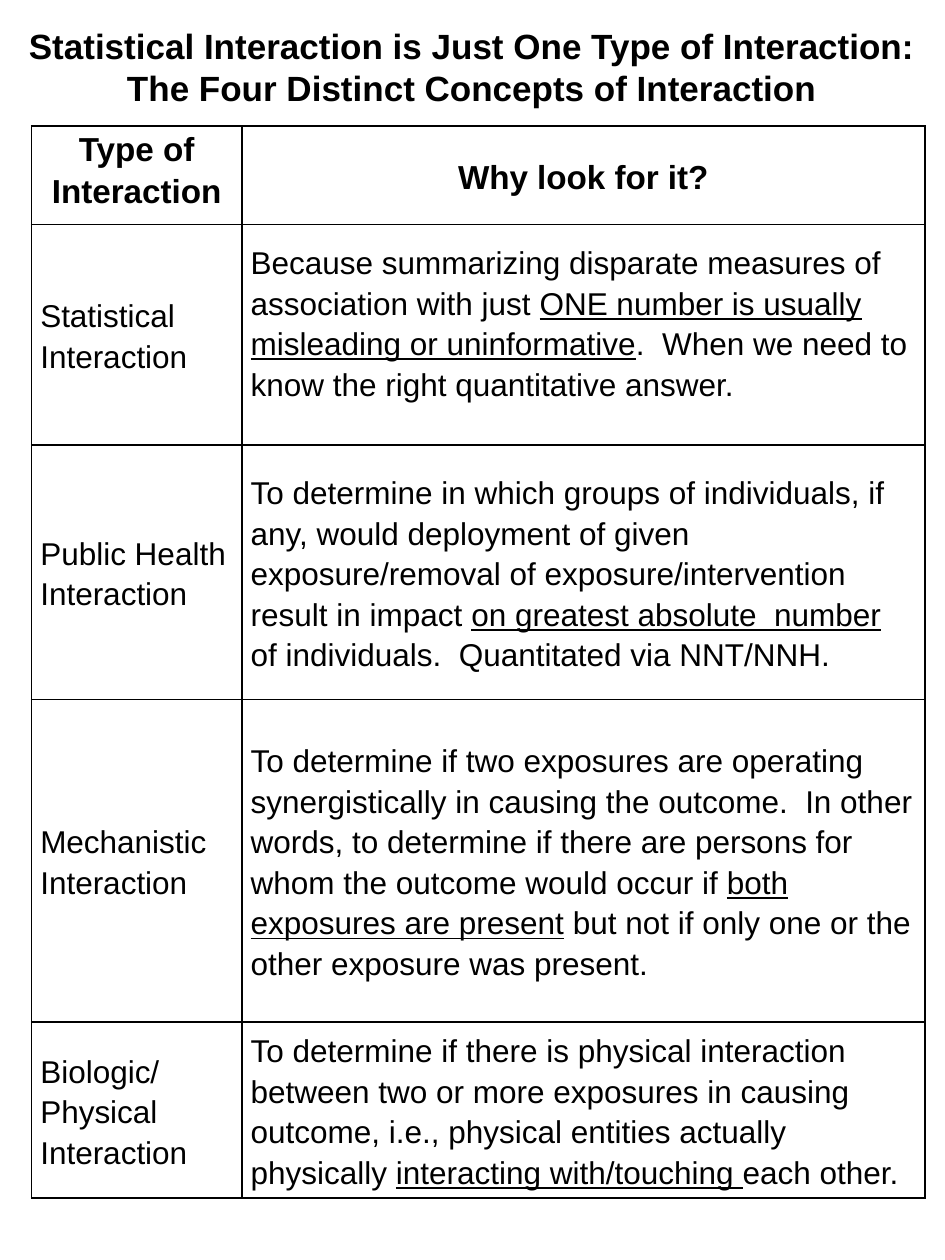
from lxml.etree import SubElement
from pptx import Presentation
from pptx.dml.color import RGBColor
from pptx.enum.text import MSO_ANCHOR, MSO_AUTO_SIZE, PP_ALIGN
from pptx.oxml.ns import qn
from pptx.util import Inches, Pt

INK = "000000"
HEADERS = ["Type of Interaction", "Why look for it?"]
CONCEPTS = [
    ("Statistical Interaction",
     ["Because summarizing disparate measures of association with just ",
      "ONE number is usually misleading or uninformative",
      ".  When we need to know the right quantitative answer."]),
    ("Public Health Interaction",
     ["To determine in which groups of individuals, if any, would deployment of given "
      "exposure/removal of exposure/intervention result in impact ",
      "on greatest absolute  number ",
      "of individuals.  Quantitated via NNT/NNH."]),
    ("Mechanistic Interaction",
     ["To determine if two exposures are operating synergistically in causing the outcome.  "
      "In other words, to determine if there are persons for whom the outcome would occur if ",
      "both exposures are present",
      " but not if only one or the other exposure was present."]),
    ("Biologic/ Physical Interaction",
     ["To determine if there is physical interaction between two or more exposures in "
      "causing outcome, i.e., physical entities actually physically ",
      "interacting with/touching ",
      "each other."]),
]


def color(hex_code):
    return RGBColor.from_string(hex_code)


def add_text(p, text, size=18, bold=False, underline=False, align=PP_ALIGN.LEFT, spacing=1.15):
    p.alignment = align
    p.line_spacing = spacing
    r = p.add_run()
    r.text = text
    r.font.name = "Arial"
    r.font.size = Pt(size)
    r.font.bold = bold
    r.font.underline = underline
    r.font.color.rgb = color(INK)


def format_cell(cell):
    cell.vertical_anchor = MSO_ANCHOR.MIDDLE
    cell.margin_left = cell.margin_right = Inches(0.07)
    cell.margin_top = cell.margin_bottom = 0
    tc_pr = cell._tc.get_or_add_tcPr()
    for side in ("lnL", "lnR", "lnT", "lnB"):
        ln = SubElement(tc_pr, qn(f"a:{side}"), w=str(Pt(1)))
        fill = SubElement(ln, qn("a:solidFill"))
        SubElement(fill, qn("a:srgbClr"), val=INK)
    cell.fill.background()


def add_title(s, left, top, width, height):
    sp = s.shapes.title
    sp.left, sp.top, sp.width, sp.height = map(Inches, (left, top, width, height))
    tf = sp.text_frame
    tf.auto_size = MSO_AUTO_SIZE.NONE
    tf.vertical_anchor = MSO_ANCHOR.BOTTOM
    p = tf.paragraphs[0]
    lines = ["Statistical Interaction is Just One Type of Interaction:",
             "The Four Distinct Concepts of Interaction"]
    for i, line in enumerate(lines):
        if i:
            p.add_line_break()
        add_text(p, line, size=20, bold=True, align=PP_ALIGN.CENTER, spacing=1.0)


def add_concept_table(s, left, top, width, height):
    row_heights = [0.78, 1.75, 2.02, 2.56, 1.4]
    first_width = 1.67
    frame = s.shapes.add_table(len(row_heights), 2, *map(Inches, (left, top, width, height)))
    table = frame.table
    table.first_row = table.horz_banding = False
    table.columns[0].width = Inches(first_width)
    table.columns[1].width = Inches(width - first_width)
    for row, row_height in zip(table.rows, row_heights):
        row.height = Inches(row_height)
        for cell in row.cells:
            format_cell(cell)
    for col, header in enumerate(HEADERS):
        p = table.cell(0, col).text_frame.paragraphs[0]
        add_text(p, header, size=19, bold=True, align=PP_ALIGN.CENTER)
    table.cell(0, 0).vertical_anchor = MSO_ANCHOR.TOP
    for row, (name, reason) in enumerate(CONCEPTS, start=1):
        add_text(table.cell(row, 0).text_frame.paragraphs[0], name)
        p = table.cell(row, 1).text_frame.paragraphs[0]
        for i, part in enumerate(reason):
            add_text(p, part, underline=i == 1)
    table.cell(1, 1).margin_bottom = Inches(0.2)


def main():
    prs = Presentation()
    prs.slide_width, prs.slide_height = Inches(7.5), Inches(10)
    s = prs.slides.add_slide(prs.slide_layouts[5])
    add_title(s, 0.08, 0.33, 7.33, 0.58)
    add_concept_table(s, 0.25, 1, 7.09, 8.51)
    prs.save("out.pptx")


if __name__ == "__main__":
    main()
